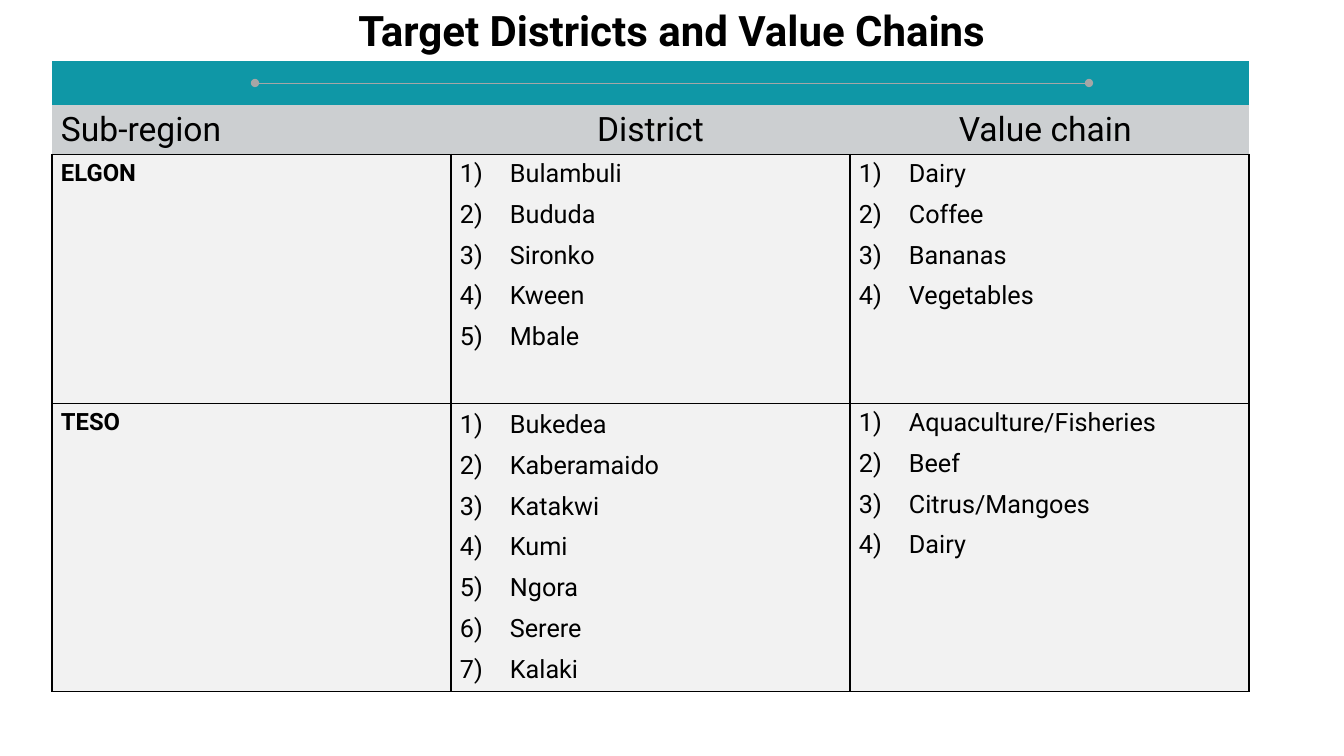
import pptx
import pptx.dml.color
import pptx.enum.shapes
import pptx.enum.text
import pptx.oxml
import pptx.oxml.ns
import pptx.util
from dataclasses import dataclass

EMU_PER_PX = 914400 / 100.8
ALIGN = pptx.enum.text.PP_ALIGN
ANCHOR = pptx.enum.text.MSO_ANCHOR


@dataclass(frozen=True)
class Theme:
    font: str = "Roboto"
    ink: str = "000000"
    band: str = "0F97A6"
    header: str = "CCCFD1"
    body: str = "F2F2F2"
    rule: str = "A6A6A6"
    title_size: int = 30
    header_size: int = 24
    region_size: int = 17
    item_size: int = 18


THEME = Theme()
HEADERS = [("Sub-region", ALIGN.LEFT), ("District", ALIGN.CENTER), ("Value chain ", ALIGN.CENTER)]
REGIONS = [
    ("ELGON", ["Bulambuli", "Bududa", "Sironko", "Kween", "Mbale"],
     ["Dairy", "Coffee", "Bananas", "Vegetables"]),
    ("TESO", ["Bukedea", "Kaberamaido", "Katakwi", "Kumi", "Ngora", "Serere", "Kalaki"],
     ["Aquaculture/Fisheries", "Beef", "Citrus/Mangoes", "Dairy"]),
]
COLUMN_WIDTH = 399
ROW_HEIGHTS = [44, 49, 249, 288]


def px(length):
    return pptx.util.Emu(round(length * EMU_PER_PX))


def rgb(value):
    return pptx.dml.color.RGBColor.from_string(value)


def set_values(target, values):
    for name, value in values.items():
        setattr(target, name, value)


def make_element(tag, **attributes):
    element = pptx.oxml.parse_xml(f"<a:{tag} {pptx.oxml.ns.nsdecls('a')}/>")
    for name, value in attributes.items():
        element.set(name, str(value))
    return element


def write_text(para, text, size, bold=False, align=ALIGN.LEFT):
    para.alignment = align
    span = para.add_run()
    span.text = text
    set_values(span.font, {"name": THEME.font, "size": pptx.util.Pt(size), "bold": bold})
    span.font.color.rgb = rgb(THEME.ink)


def write_numbered_list(frame, items):
    for index, item in enumerate(items):
        para = frame.add_paragraph() if index else frame.paragraphs[0]
        write_text(para, item, THEME.item_size)
        para.space_after = pptx.util.Pt(8)
        properties = para._p.get_or_add_pPr()
        set_indent = {"marL": px(50), "indent": px(-50)}
        for name, value in set_indent.items():
            properties.set(name, str(value))
        properties.append(make_element("buFont", typeface="+mj-lt"))
        properties.append(make_element("buAutoNum", type="arabicParenR"))


def style_cell(cell, fill, black_sides, anchor=ANCHOR.TOP):
    set_values(cell, {"margin_left": px(9), "margin_right": px(9), "margin_top": px(5),
                      "margin_bottom": px(5), "vertical_anchor": anchor})
    properties = cell._tc.get_or_add_tcPr()
    for side in "LRTB":
        border = make_element(f"ln{side}", w=pptx.util.Pt(1))
        if side in black_sides:
            color = make_element("solidFill")
            color.append(make_element("srgbClr", val=THEME.ink))
            border.append(color)
        else:
            border.append(make_element("noFill"))
        properties.append(border)
    cell.fill.solid()
    cell.fill.fore_color.rgb = rgb(fill)


def add_district_table(page):
    columns = len(HEADERS)
    table = page.shapes.add_table(len(ROW_HEIGHTS), columns, px(52), px(61),
                                  px(COLUMN_WIDTH * columns), px(sum(ROW_HEIGHTS))).table
    set_values(table, {"first_row": False, "horz_banding": False})
    for column in table.columns:
        column.width = px(COLUMN_WIDTH)
    for row, height in zip(table.rows, ROW_HEIGHTS):
        row.height = px(height)

    for index, (text, align) in enumerate(HEADERS):
        style_cell(table.cell(0, index), THEME.band, "")
        header = table.cell(1, index)
        style_cell(header, THEME.header, "B", ANCHOR.MIDDLE)
        write_text(header.text_frame.paragraphs[0], text, THEME.header_size, align=align)
    table.cell(0, 0).merge(table.cell(0, columns - 1))

    for row, (region, districts, chains) in enumerate(REGIONS, start=2):
        region_cell, district_cell, chain_cell = table.rows[row].cells
        for cell in (region_cell, district_cell, chain_cell):
            style_cell(cell, THEME.body, "LRTB")
        write_text(region_cell.text_frame.paragraphs[0], region, THEME.region_size, bold=True)
        write_numbered_list(district_cell.text_frame, districts)
        write_numbered_list(chain_cell.text_frame, chains)
    table.cell(len(ROW_HEIGHTS) - 1, 1).vertical_anchor = ANCHOR.MIDDLE


def add_title(page, text):
    box = page.shapes.add_textbox(0, 0, px(1344), px(61))
    set_values(box.text_frame, {"word_wrap": True,
                                "auto_size": pptx.enum.text.MSO_AUTO_SIZE.SHAPE_TO_FIT_TEXT})
    write_text(box.text_frame.paragraphs[0], text, THEME.title_size, True, ALIGN.CENTER)


def add_dotted_end_rule(page, left, right, top):
    rule = page.shapes.add_connector(pptx.enum.shapes.MSO_CONNECTOR.STRAIGHT,
                                     px(left), px(top), px(right), px(top))
    rule.line.color.rgb = rgb(THEME.rule)
    rule.line.width = pptx.util.Pt(0.5)
    outline = rule.line._get_or_add_ln()
    for end in ("headEnd", "tailEnd"):
        outline.append(make_element(end, type="oval"))
    rule._element.spPr.append(make_element("effectLst"))


def main():
    deck = pptx.Presentation()
    set_values(deck, {"slide_width": px(1344), "slide_height": px(756)})
    page = deck.slides.add_slide(deck.slide_layouts[6])
    add_district_table(page)
    add_title(page, "Target Districts and Value Chains")
    add_dotted_end_rule(page, 255, 1089, 83)
    deck.save("out.pptx")


if __name__ == "__main__":
    main()
